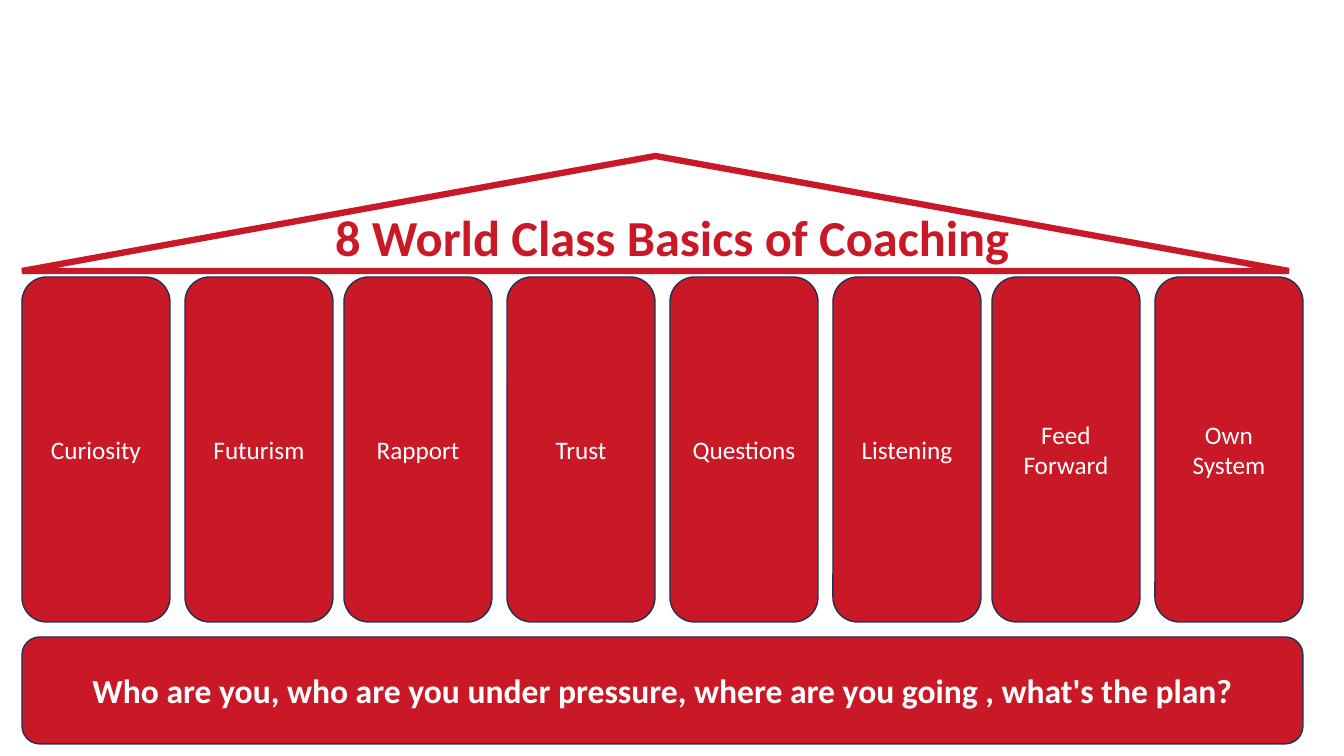
from pptx import Presentation
from pptx.dml.color import RGBColor
from pptx.enum.shapes import MSO_SHAPE
from pptx.enum.text import MSO_ANCHOR, PP_ALIGN
from pptx.oxml.ns import qn
from pptx.util import Emu, Pt
from lxml.etree import SubElement

TITLE = "8 World Class Basics of Coaching"
PILLARS = ["Curiosity", "Futurism", "Rapport", "Trust",
           "Questions", "Listening", "Feed\nForward", "Own\nSystem"]
FOUNDATION = "Who are you, who are you under pressure, where are you going , what's the plan?"

RED, NAVY, WHITE = "C91826", "1E3256", "FFFFFF"
FONT = "Calibri"

# Lengths in px, 100.8 px to the inch
SLIDE_WIDTH, SLIDE_HEIGHT = 1344, 756
LEFT = 22
ROOF = (LEFT, 156, 1267, 115)
TITLE_BOX = (93, 167, 1159, 146)
PILLAR_TOP, PILLAR_WIDTH, PILLAR_HEIGHT = 277, 148, 345
GAP, NARROW_GAP = 15, 11
NARROW_BEFORE = (2, 6)
FOUNDATION_BOX = (LEFT, 637, 1281, 107)


def px(length):
    return Emu(round(length * 914400 / 100.8))


def color(code):
    return RGBColor.from_string(code)


def write(box, text, size, ink, bold=False, line_spacing=None):
    frame = box.text_frame
    frame.word_wrap = True
    frame.vertical_anchor = MSO_ANCHOR.MIDDLE
    for index, line in enumerate(text.split("\n")):
        para = frame.paragraphs[0] if index == 0 else frame.add_paragraph()
        para.alignment = PP_ALIGN.CENTER
        para.line_spacing = line_spacing
        span = para.add_run()
        span.text = line
        span.font.name = FONT
        span.font.size = Pt(size)
        span.font.bold = bold
        span.font.color.rgb = color(ink)


def add_block(page, kind, place, fill, line, width):
    block = page.shapes.add_shape(kind, *map(px, place))
    block.shadow.inherit = False
    block.fill.solid()
    block.fill.fore_color.rgb = color(fill)
    block.line.color.rgb = color(line)
    block.line.width = Pt(width)
    return block


def add_stone(page, place, text, size, bold=False):
    """Add a rounded red block with white text."""
    stone = add_block(page, MSO_SHAPE.ROUNDED_RECTANGLE, place, RED, NAVY, 1)
    write(stone, text, size, WHITE, bold)


def main():
    deck = Presentation()
    deck.slide_width, deck.slide_height = px(SLIDE_WIDTH), px(SLIDE_HEIGHT)
    page = deck.slides.add_slide(deck.slide_layouts[6])

    roof = add_block(page, MSO_SHAPE.ISOSCELES_TRIANGLE, ROOF, WHITE, RED, 4.5)
    roof.adjustments[0] = 0.5
    SubElement(roof.line._get_or_add_ln(), qn("a:miter"), lim="800000")

    left = LEFT
    for index, name in enumerate(PILLARS):
        if index:
            left += PILLAR_WIDTH + (NARROW_GAP if index in NARROW_BEFORE else GAP)
        add_stone(page, (left, PILLAR_TOP, PILLAR_WIDTH, PILLAR_HEIGHT), name, 18)

    add_stone(page, FOUNDATION_BOX, FOUNDATION, 24, bold=True)

    title = page.shapes.add_textbox(*map(px, TITLE_BOX))
    write(title, TITLE, 36, RED, bold=True, line_spacing=0.9)

    deck.save("out.pptx")


if __name__ == "__main__":
    main()
